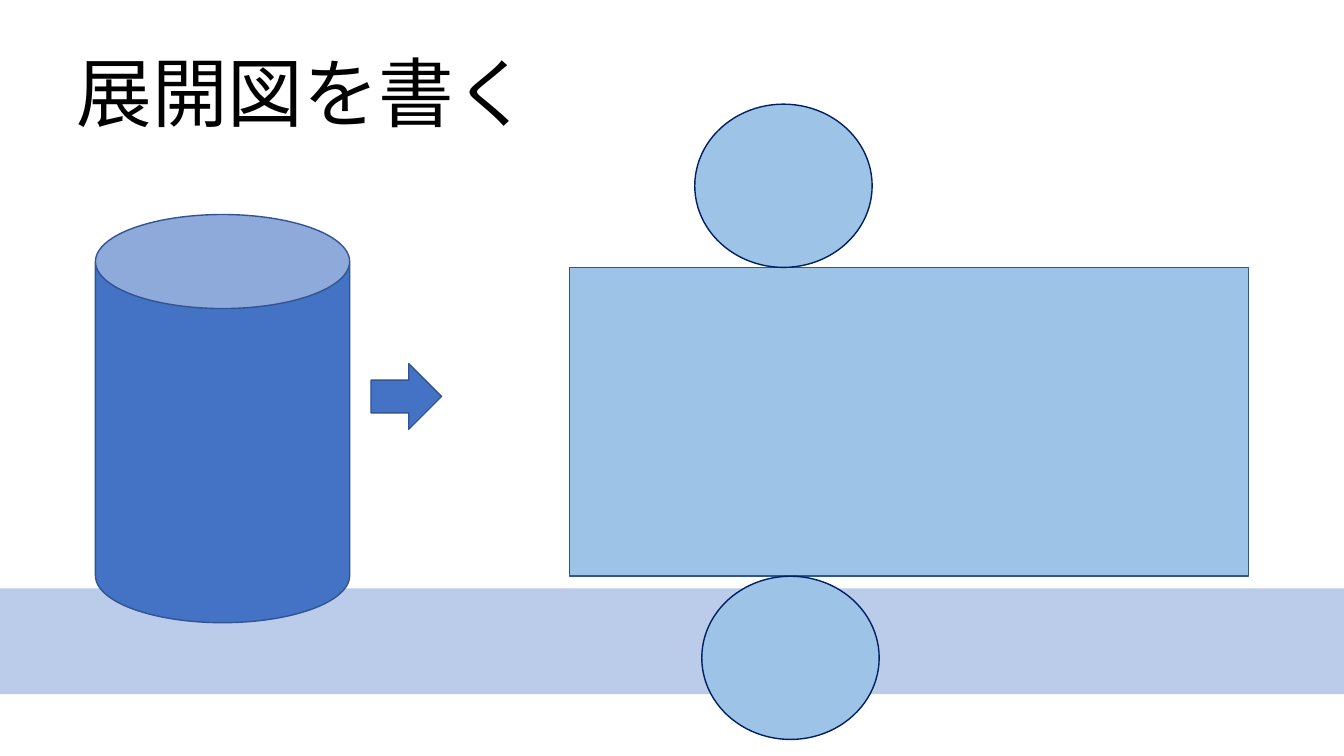
from lxml.etree import SubElement
from pptx import Presentation
from pptx.dml.color import RGBColor
from pptx.enum.shapes import MSO_SHAPE as Preset
from pptx.enum.text import MSO_ANCHOR as Anchor, MSO_AUTO_SIZE as AutoSize, PP_ALIGN as Align
from pptx.oxml.ns import qn
from pptx.util import Pt

FONT = "Noto Sans CJK JP"
BLUE, OUTLINE, NET_BLUE, NAVY, BAND = "4472C4", "325491", "9DC3E6", "002060", "8FAADC"


def color(hex_code):
    """Turn a hex string into a colour."""
    return RGBColor.from_string(hex_code)


def add_figure(shapes, preset, box, fill, line=None):
    """Add a filled preset shape in the box, outlined if a line colour is given."""
    figure = shapes.add_shape(preset, *(Pt(length) for length in box))
    figure.shadow.inherit = False
    figure.fill.solid()
    figure.fill.fore_color.rgb = color(fill)
    if line:
        figure.line.color.rgb = color(line)
        figure.line.width = Pt(1)
    else:
        figure.line.fill.background()
    return figure


def add_band(page, box):
    """Add the translucent band across the page."""
    band = add_figure(page.shapes, Preset.RECTANGLE, box, BAND)
    fill_color = band.fill._xPr.find(qn("a:solidFill"))[0]
    SubElement(fill_color, qn("a:alpha"), val="60000")


def add_title(page, box, text):
    """Place and format the page title."""
    title = page.shapes.title
    title.left, title.top, title.width, title.height = (Pt(length) for length in box)
    frame = title.text_frame
    frame.text = text
    frame.word_wrap = False
    frame.auto_size = AutoSize.NONE
    frame.vertical_anchor = Anchor.MIDDLE
    para = frame.paragraphs[0]
    para.alignment = Align.LEFT
    span = para.runs[0]
    span.font.size = Pt(54)
    span.font.name = FONT
    span.font.color.rgb = color("000000")
    SubElement(span.font._element, qn("a:ea"), typeface=FONT)


def add_solid(page, box):
    """Add the cylinder and the arrow that leads from it to its net."""
    left, top, width, height = box
    cylinder = add_figure(page.shapes, Preset.CAN, box, BLUE, OUTLINE)
    cylinder.adjustments[0] = 0.37
    arrow_box = (left + width + 15.2, top + 106.6, 50.4, 46.8)
    add_figure(page.shapes, Preset.RIGHT_ARROW, arrow_box, BLUE, OUTLINE)


def add_net(page, box):
    """Add the unrolled side in the box with a base circle above and below."""
    left, top, width, height = box
    circle_width, circle_height = 126.7, 116.6
    net = page.shapes.add_group_shape().shapes
    add_figure(net, Preset.RECTANGLE, box, NET_BLUE, OUTLINE)
    for shift, circle_top in ((89.3, top - circle_height), (94.3, top + height)):
        circle_box = (left + shift, circle_top, circle_width, circle_height)
        add_figure(net, Preset.OVAL, circle_box, NET_BLUE, NAVY)


def main():
    """Build the page and save the deck."""
    deck = Presentation()
    deck.slide_width, deck.slide_height = Pt(960), Pt(540)
    page = deck.slides.add_slide(deck.slide_layouts[5])
    add_band(page, (0, 420.3, 960, 75.6))
    add_title(page, (47.5, 28.8, 342, 72.7), "展開図を書く")
    add_solid(page, (68.2, 153.2, 181.6, 291.6))
    add_net(page, (407, 191, 484.8, 220.6))
    deck.save("out.pptx")


if __name__ == "__main__":
    main()
